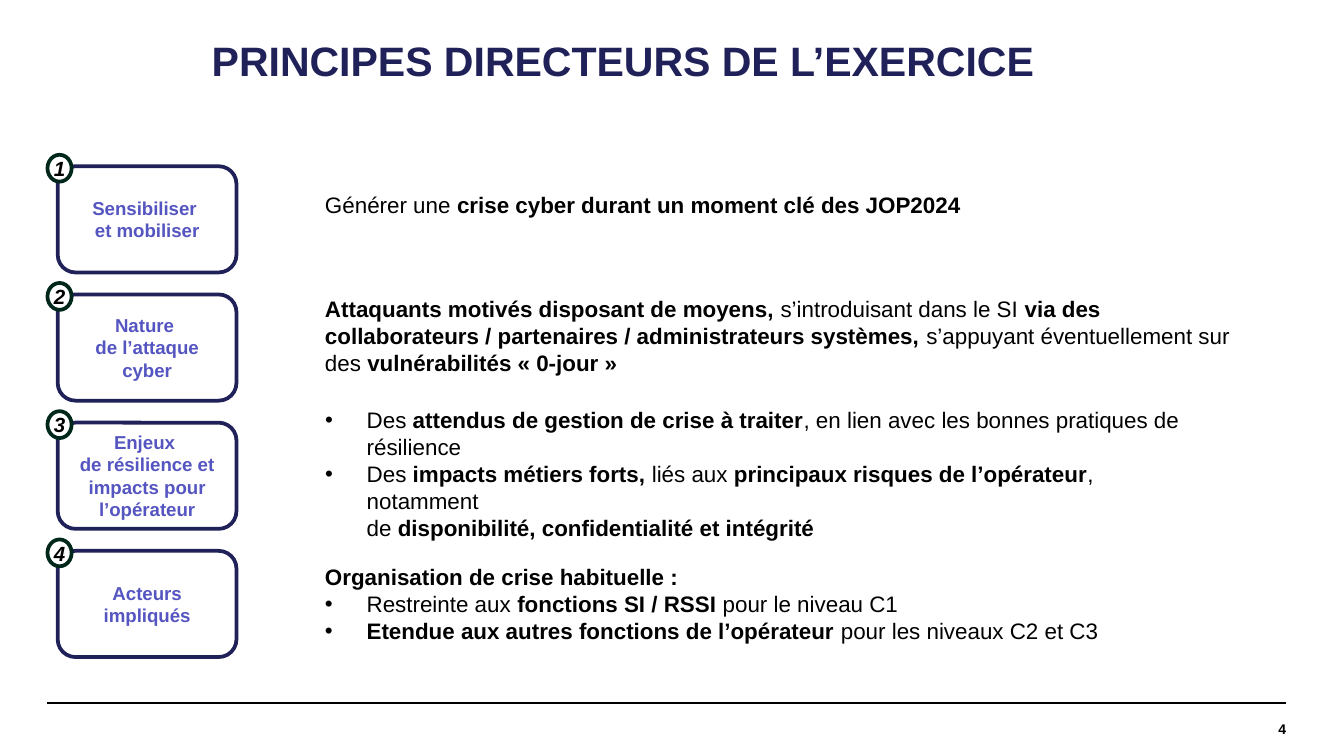
from lxml.etree import SubElement
from pptx import Presentation
from pptx.dml.color import RGBColor
from pptx.enum.shapes import MSO_CONNECTOR, MSO_SHAPE
from pptx.enum.text import MSO_ANCHOR as ANCHOR, MSO_AUTO_SIZE as AUTO, PP_ALIGN as ALIGN
from pptx.oxml.ns import qn
from pptx.util import Inches, Pt

NAVY = RGBColor(0x21, 0x21, 0x5A)
VIOLET = RGBColor(0x55, 0x55, 0xC1)
GREEN = RGBColor(0x00, 0x27, 0x1C)
BLACK = RGBColor(0, 0, 0)
WHITE = RGBColor(255, 255, 255)

CELL = Inches(0.1)
COLS, ROWS = 100, 56.25
LEFT, RIGHT, FOOT = 3.53, 95.7, 52.3
FIRST_ROW, ROW_STEP = 12.37, 9.54
BODY_COL = 23.2
BODY_SIZE = 12
LINE_ROWS = 2.02

PRINCIPLES = [
    ("Sensibiliser \net mobiliser", 13.72, 72.4, 1,
     ["Générer une **crise cyber durant un moment clé des JOP2024**"]),
    ("Nature \nde l’attaque cyber", 21.5, 72.4, 3,
     ["**Attaquants motivés disposant de moyens, **s’introduisant dans le SI **via des "
      "collaborateurs / partenaires / administrateurs systèmes,** s’appuyant éventuellement "
      "sur des **vulnérabilités « 0-jour »**"]),
    ("Enjeux \nde résilience et impacts pour l’opérateur", 29.73, 66.1, 5,
     ["• Des **attendus de gestion de crise à traiter**, en lien avec les bonnes pratiques "
      "de résilience",
      "• Des** impacts métiers forts, **liés aux **principaux risques de l’opérateur**, "
      "notamment \nde **disponibilité, confidentialité et intégrité**"]),
    ("Acteurs impliqués", 41.42, 72.4, 3,
     ["**Organisation de crise habituelle :**",
      "• Restreinte aux** fonctions SI / RSSI **pour le niveau C1",
      "• **Etendue aux autres fonctions de l’opérateur** pour les niveaux C2 et C3"]),
]


def cells(*counts):
    return [round(n * CELL) for n in counts]


class Board:
    font = "Arial"

    def __init__(self, prs):
        self.s = prs.slides.add_slide(prs.slide_layouts[5])

    def style(self, r, size, color, bold=True, italic=False):
        r.font.name, r.font.size = self.font, Pt(size)
        r.font.bold, r.font.italic = bold, italic
        r.font.color.rgb = color

    def fill_text(self, tf, text, size, color, align, italic=False):
        tf.text = text
        tf.vertical_anchor = ANCHOR.MIDDLE
        for p in tf.paragraphs:
            p.alignment = align
            for r in p.runs:
                self.style(r, size, color, italic=italic)

    def no_insets(self, tf):
        tf.margin_left = tf.margin_right = tf.margin_top = tf.margin_bottom = 0

    def title(self, text, *box):
        sp = self.s.shapes.title
        sp.left, sp.top, sp.width, sp.height = cells(*box)
        tf = sp.text_frame
        tf.auto_size = AUTO.NONE
        self.fill_text(tf, text, 22, NAVY, ALIGN.LEFT)
        p = tf.paragraphs[0]
        p.line_spacing = 0.9
        p._p.get_or_add_pPr().set("marL", str(Inches(0.02)))

    def rule(self, x1, x2, y):
        ln = self.s.shapes.add_connector(MSO_CONNECTOR.STRAIGHT, *cells(x1, y, x2, y))
        ln.line.color.rgb, ln.line.width = BLACK, Pt(0.8)
        SubElement(ln._element.spPr, qn("a:effectLst"))

    def page_number(self, text, *box):
        tf = self.s.shapes.add_textbox(*cells(*box)).text_frame
        tf.word_wrap = True
        self.no_insets(tf)
        self.fill_text(tf, text, 7.5, BLACK, ALIGN.RIGHT)

    def outline(self, kind, line, *box):
        sp = self.s.shapes.add_shape(kind, *cells(*box))
        sp.shadow.inherit = False
        sp.line.color.rgb, sp.line.width = line, Pt(2)
        return sp

    def label(self, text, *box):
        sp = self.outline(MSO_SHAPE.ROUNDED_RECTANGLE, NAVY, *box)
        sp.fill.background()
        self.fill_text(sp.text_frame, text, 10, VIOLET, ALIGN.CENTER)

    def badge(self, text, *box):
        sp = self.outline(MSO_SHAPE.OVAL, GREEN, *box)
        sp.fill.solid()
        sp.fill.fore_color.rgb = WHITE
        tf = sp.text_frame
        tf.word_wrap = False
        self.no_insets(tf)
        self.fill_text(tf, text, 11, BLACK, ALIGN.CENTER, italic=True)

    def bullet(self, p):
        pPr = p._p.get_or_add_pPr()
        pPr.set("marL", str(Inches(0.31)))
        pPr.set("indent", str(-Inches(0.31)))
        SubElement(pPr, qn("a:buFont"), typeface=self.font)
        SubElement(pPr, qn("a:buChar"), char="•")

    def rich(self, p, text):
        for n, line in enumerate(text.split("\n")):
            if n:
                p.add_line_break()
                br = p._p.findall(qn("a:br"))[-1]
                SubElement(br, qn("a:rPr"), sz=str(BODY_SIZE * 100))
            for i, part in enumerate(line.split("**")):
                if part:
                    r = p.add_run()
                    r.text = part
                    self.style(r, BODY_SIZE, BLACK, bold=i % 2 == 1)

    def body(self, paragraphs, *box):
        tf = self.s.shapes.add_textbox(*cells(*box)).text_frame
        tf.word_wrap = True
        for i, text in enumerate(paragraphs):
            p = tf.add_paragraph() if i else tf.paragraphs[0]
            if text.startswith("• "):
                self.bullet(p)
            self.rich(p, text.removeprefix("• "))


def main():
    prs = Presentation()
    prs.slide_width, prs.slide_height = cells(COLS, ROWS)
    board = Board(prs)
    board.rule(LEFT, RIGHT, FOOT)
    board.page_number("4", 80.9, FOOT, 14.8, 3.9)
    board.title("PRINCIPES DIRECTEURS DE L’EXERCICE", 14.55, 1.35, 77.2, 6.7)
    for i, (name, top, width, lines, paragraphs) in enumerate(PRINCIPLES):
        y = FIRST_ROW + i * ROW_STEP
        board.label(name, LEFT + 0.77, y, 13.3, 7.9)
        board.badge(str(i + 1), LEFT, y - 0.85, 1.8, 2)
        board.body(paragraphs, BODY_COL, top, width, 1 + lines * LINE_ROWS)
    prs.save("out.pptx")


if __name__ == "__main__":
    main()
